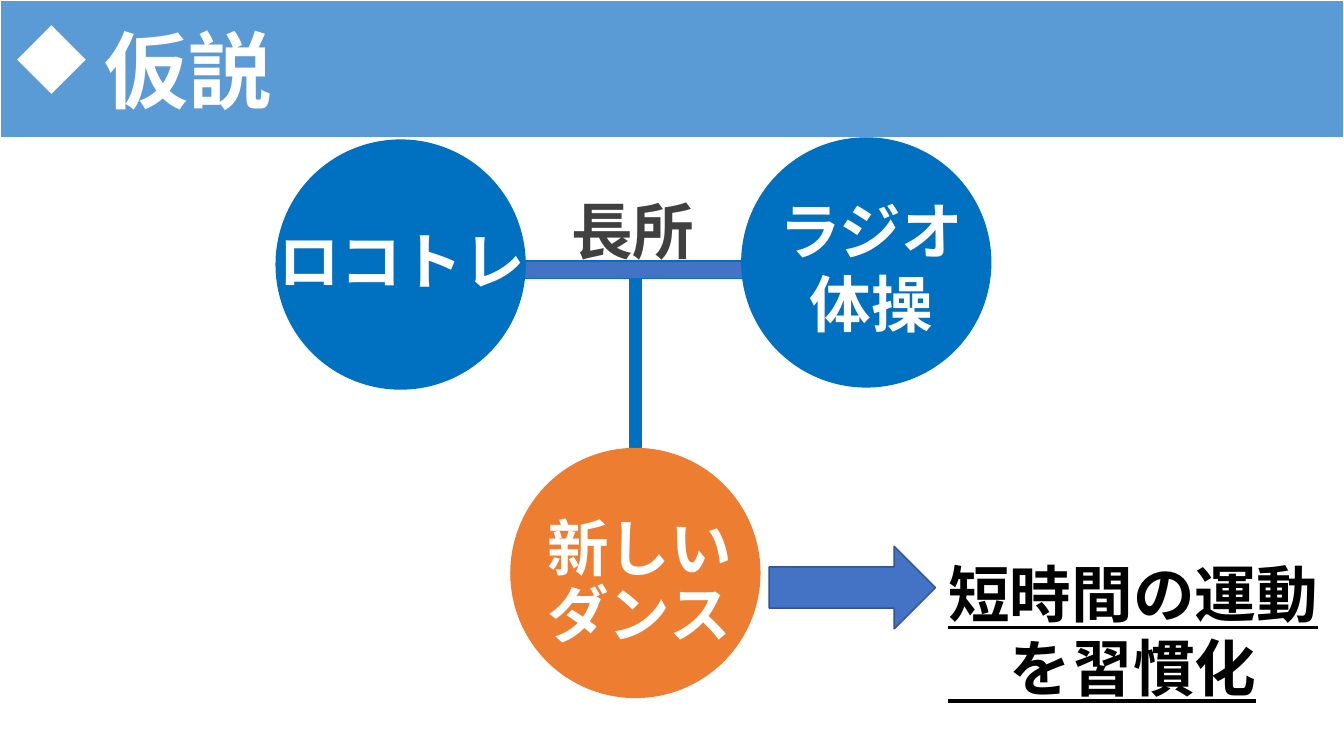
from lxml import etree
from pptx import Presentation
from pptx import util as u
from pptx.dml.color import RGBColor
from pptx.enum import shapes, text
from pptx.oxml.ns import qn

FONT = "Noto Sans CJK JP"
BLUE = "0070C0"
INDIGO = "4472C4"
ORANGE = "ED7D31"
WHITE = "FFFFFF"
CIRCLE = 177.8
Kind = shapes.MSO_SHAPE
Align = text.PP_ALIGN


def color(value):
    return RGBColor.from_string(value)


def place(item, left, top, width, height):
    item.left, item.top = u.Pt(left), u.Pt(top)
    item.width, item.height = u.Pt(width), u.Pt(height)


def add_shape(page, kind, bounds, fill, line):
    shape = page.shapes.add_shape(kind, *map(u.Pt, bounds))
    shape.shadow.inherit = False
    shape.fill.solid()
    shape.fill.fore_color.rgb = color(fill)
    shape.line.color.rgb = color(line)
    shape.line.width = u.Pt(1)
    return shape


def add_bar(page, bounds, fill, rotation=0):
    bar = add_shape(page, Kind.MATH_MINUS, bounds, fill, BLUE)
    bar.adjustments[0] = 0.235
    bar.rotation = rotation


def add_circle(page, left, top, fill):
    add_shape(page, Kind.OVAL, (left, top, CIRCLE, CIRCLE), fill, fill)


def format_text(frame, size, ink, align, spacing=1.0, underline=False):
    frame.word_wrap = True
    for para in frame.paragraphs:
        para.alignment = align
        para.line_spacing = spacing
        for span in para.runs:
            font = span.font
            font.name, font.size, font.bold = FONT, u.Pt(size), True
            font.color.rgb = color(ink)
            if underline:
                font.underline = True
            east_asian = etree.Element(qn("a:ea"), typeface=FONT)
            font._element.find(qn("a:latin")).addnext(east_asian)


def add_label(page, words, bounds, ink=WHITE, align=Align.LEFT, **style):
    box = page.shapes.add_textbox(*map(u.Pt, bounds))
    box.text_frame.text = words
    format_text(box.text_frame, 44, ink, align, **style)


def add_title(page, words):
    add_shape(page, Kind.RECTANGLE, (0, 0, 960, 98.6), "5B9BD5", WHITE)
    title = page.shapes.title
    page.shapes._spTree.append(title._element)
    place(title, 0, 1.4, 828, 104.4)
    frame = title.text_frame
    frame.text = words
    frame.auto_size = text.MSO_AUTO_SIZE.NONE
    frame.vertical_anchor = text.MSO_ANCHOR.MIDDLE
    format_text(frame, 60, WHITE, Align.LEFT, spacing=0.9)
    props = frame.paragraphs[0]._p.get_or_add_pPr()
    props.set("marL", str(u.Pt(67.5)))
    props.set("indent", str(-u.Pt(67.5)))
    etree.SubElement(props, qn("a:buFont"), typeface="Wingdings", charset="2")
    etree.SubElement(props, qn("a:buChar"), char="u")


def main():
    deck = Presentation()
    deck.slide_width, deck.slide_height = u.Pt(960), u.Pt(540)
    page = deck.slides.add_slide(deck.slide_layouts.get_by_name("Title Only"))

    add_bar(page, (270.7, 312.5, 366.5, 37.4), BLUE, rotation=90)
    add_bar(page, (293.8, 166.3, 340.6, 52.6), INDIGO)
    add_title(page, "仮説")

    add_circle(page, 197.3, 100.1, BLUE)
    add_label(page, "ロコトレ", (185, 155.5, 204.5, 108.7), align=Align.CENTER)
    add_circle(page, 529.9, 98.6, BLUE)
    add_label(page, "ラジオ体操", (529.9, 133.9, 185, 113.8), align=Align.CENTER)
    add_circle(page, 365, 320.4, ORANGE)
    add_label(page, "新しいダンス", (383.8, 366.5, 159.1, 107.3), spacing=0.9)

    add_label(page, "長所", (401, 134.6, 144, 60.5), ink="404040")
    add_shape(page, Kind.RIGHT_ARROW, (549.4, 390.2, 118.8, 59), INDIGO, "325491")
    add_label(page, "短時間の運動\n　を習慣化", (670.3, 393.8, 301.7, 113.8),
              ink="000000", underline=True)

    deck.save("out.pptx")


if __name__ == "__main__":
    main()
